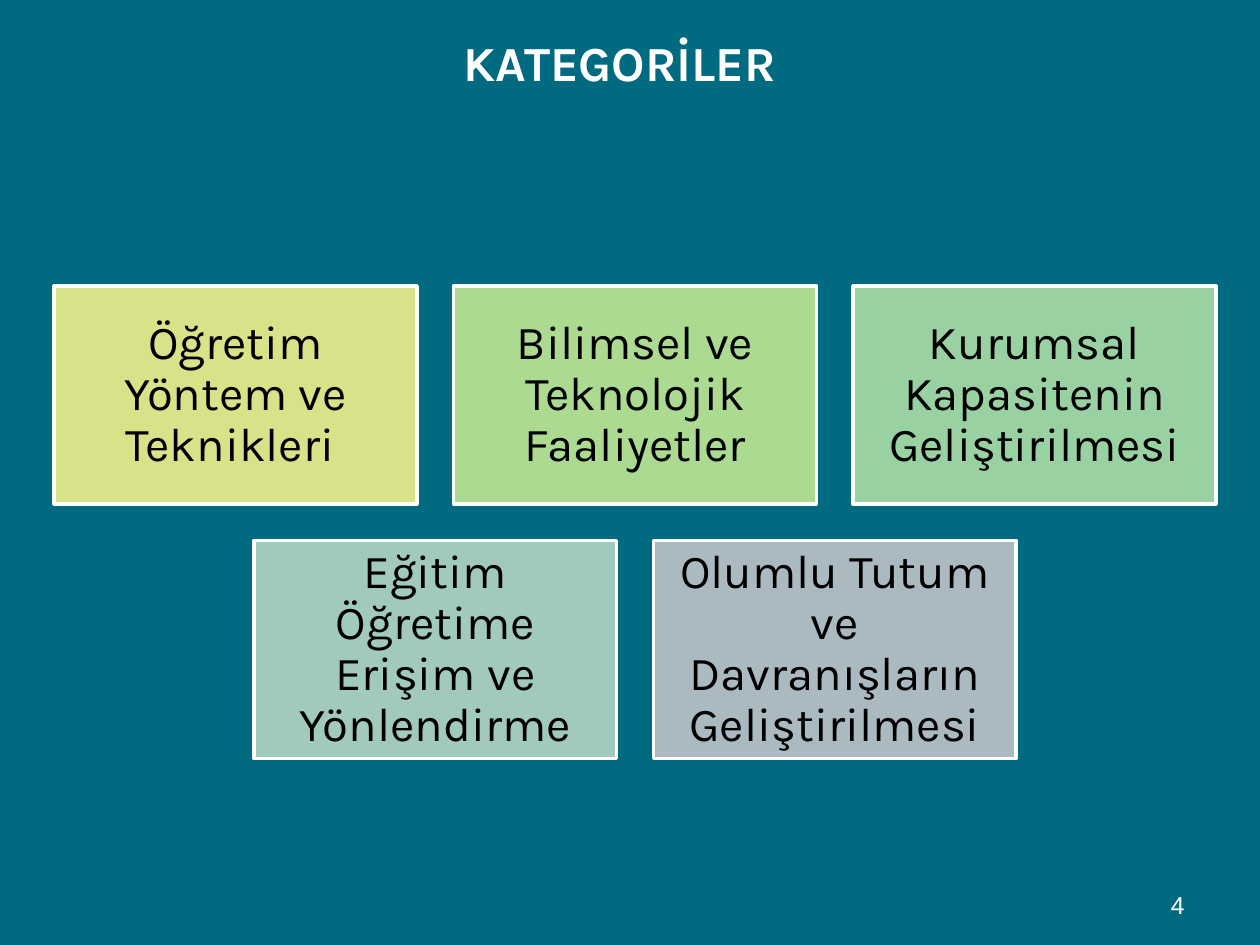
from dataclasses import dataclass

import pptx
import pptx.dml.color
import pptx.enum.shapes
import pptx.enum.text
import pptx.util

Inches = pptx.util.Inches
Align = pptx.enum.text.PP_ALIGN
Anchor = pptx.enum.text.MSO_ANCHOR

COLORS = {
    "background": "006B80",
    "white": "FFFFFF",
    "black": "000000",
    "lime": "D9E288",
    "green": "ABDA90",
    "mint": "99D1A3",
    "teal": "A2C9BE",
    "gray": "AABAC0",
}

CARD_WIDTH, CARD_HEIGHT, CARD_GAP = 2.88, 1.73, 0.29
GRID_CENTER, GRID_TOP = 5.04, 2.27
CARD_INSET = 0.11


@dataclass
class Category:
    text: str
    color: str


@dataclass
class TextStyle:
    font: str
    size: float
    color: str
    align: Align
    anchor: Anchor
    bold: bool = False
    line_spacing: float = 1.0


TITLE_STYLE = TextStyle("Karla", 28, "white", Align.CENTER, Anchor.MIDDLE, bold=True)
NUMBER_STYLE = TextStyle("Arial", 14, "white", Align.RIGHT, Anchor.BOTTOM)
CARD_STYLE = TextStyle("Karla", 27, "black", Align.CENTER, Anchor.MIDDLE, line_spacing=0.9)

CATEGORY_ROWS = [
    [
        Category("Öğretim Yöntem ve Teknikleri ", "lime"),
        Category("Bilimsel ve Teknolojik Faaliyetler", "green"),
        Category("Kurumsal Kapasitenin Geliştirilmesi", "mint"),
    ],
    [
        Category("Eğitim Öğretime Erişim ve Yönlendirme", "teal"),
        Category("Olumlu Tutum ve Davranışların Geliştirilmesi", "gray"),
    ],
]


def rgb(name: str) -> pptx.dml.color.RGBColor:
    return pptx.dml.color.RGBColor.from_string(COLORS[name])


def write_text(frame, text: str, style: TextStyle) -> None:
    frame.text = text
    frame.word_wrap = True
    frame.vertical_anchor = style.anchor
    para = frame.paragraphs[0]
    para.alignment = style.align
    para.line_spacing = style.line_spacing
    font = para.runs[0].font
    font.name = style.font
    font.size = pptx.util.Pt(style.size)
    font.bold = style.bold
    font.color.rgb = rgb(style.color)


def add_label(page, left: float, top: float, width: float, height: float,
              text: str, style: TextStyle) -> None:
    box = page.shapes.add_textbox(Inches(left), Inches(top), Inches(width), Inches(height))
    write_text(box.text_frame, text, style)


def add_card(page, left: float, top: float, category: Category) -> None:
    card = page.shapes.add_shape(
        pptx.enum.shapes.MSO_SHAPE.RECTANGLE,
        Inches(left), Inches(top), Inches(CARD_WIDTH), Inches(CARD_HEIGHT))
    card.shadow.inherit = False
    card.fill.solid()
    card.fill.fore_color.rgb = rgb(category.color)
    card.line.color.rgb = rgb("white")
    card.line.width = pptx.util.Pt(2)
    frame = card.text_frame
    frame.margin_left = frame.margin_right = Inches(CARD_INSET)
    frame.margin_top = frame.margin_bottom = Inches(CARD_INSET)
    write_text(frame, category.text, CARD_STYLE)


def main() -> None:
    deck = pptx.Presentation()
    deck.slide_width, deck.slide_height = Inches(10), Inches(7.5)
    page = deck.slides.add_slide(deck.slide_layouts[6])
    page.background.fill.solid()
    page.background.fill.fore_color.rgb = rgb("background")

    # Title and page number
    add_label(page, 1.14, 0, 7.56, 0.99, "KATEGORİLER", TITLE_STYLE)
    add_label(page, 7.17, 6.83, 2.33, 0.52, "4", NUMBER_STYLE)

    # Category cards, each row centred
    for row_index, row in enumerate(CATEGORY_ROWS):
        row_width = len(row) * (CARD_WIDTH + CARD_GAP) - CARD_GAP
        row_left = GRID_CENTER - row_width / 2
        top = GRID_TOP + row_index * (CARD_HEIGHT + CARD_GAP)
        for column, category in enumerate(row):
            add_card(page, row_left + column * (CARD_WIDTH + CARD_GAP), top, category)

    deck.save("out.pptx")


if __name__ == "__main__":
    main()
